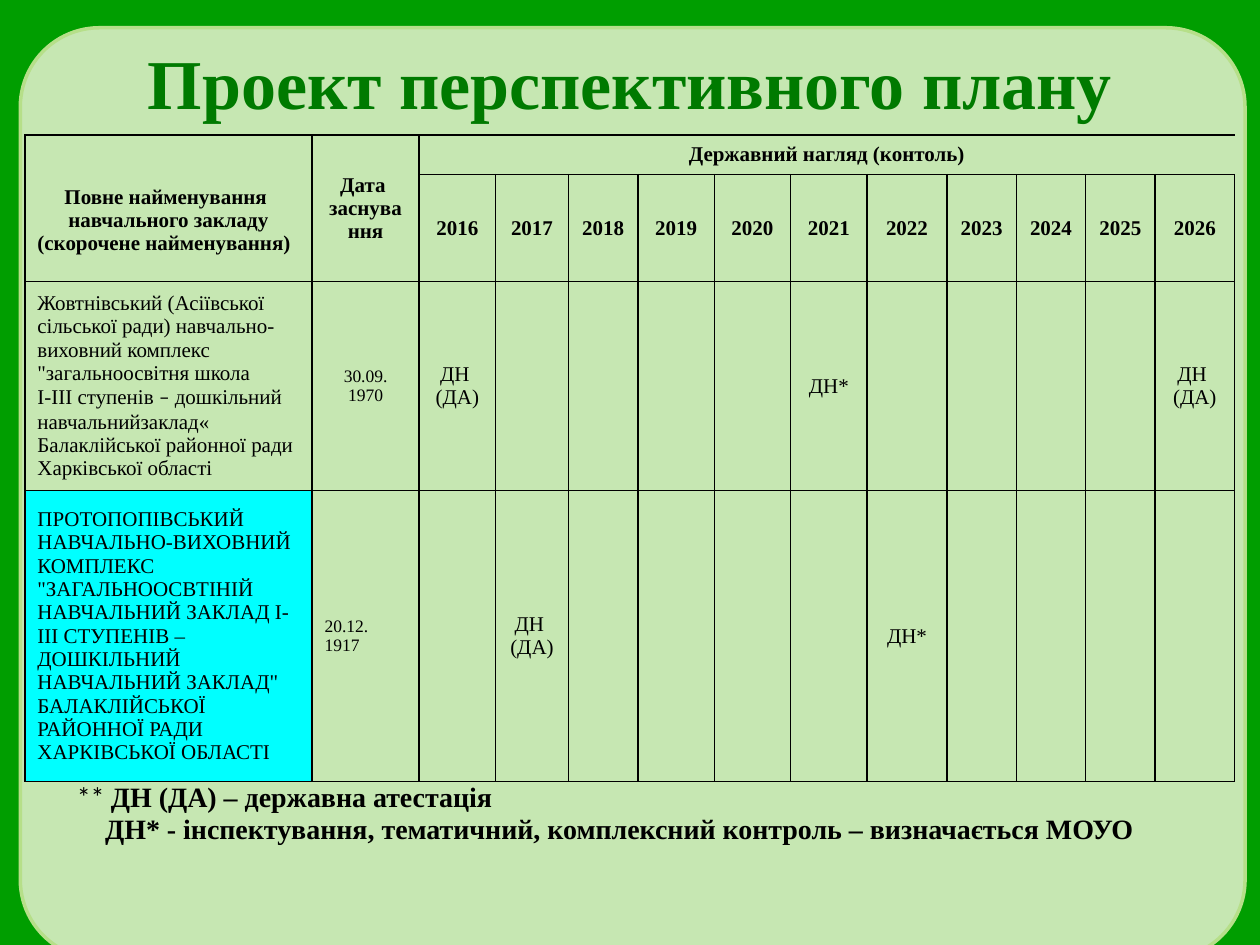
from lxml import etree
from pptx import Presentation
from pptx.dml.color import RGBColor
from pptx.enum.shapes import MSO_SHAPE
from pptx.enum.text import MSO_ANCHOR, PP_ALIGN
from pptx.oxml.ns import qn
from pptx.util import Cm, Pt

ROUNDED = MSO_SHAPE.ROUNDED_RECTANGLE
MIDDLE, TOP = MSO_ANCHOR.MIDDLE, MSO_ANCHOR.TOP
LEFT, CENTER, JUSTIFY = PP_ALIGN.LEFT, PP_ALIGN.CENTER, PP_ALIGN.JUSTIFY
TITLE_ONLY = 5
SERIF, SANS = "Times New Roman", "Calibri"

COLUMN_WIDTHS = [5.79, 2.16, 1.54, 1.47, 1.4, 1.54, 1.54, 1.54, 1.61, 1.4, 1.4, 1.4, 1.6]
ROW_HEIGHTS = [0.8, 2.1, 4.21, 5.87]
FIRST_YEAR, FIRST_YEAR_COLUMN = 2016, 2
ATTESTATION = ["ДН ", "(ДА)"]
INSPECTION = ["ДН*"]
SCHOOLS = [
    {
        "name": [
            "Жовтнівський (Асіївської",
            "сільської ради) навчально-",
            "виховний комплекс",
            '"загальноосвітня школа',
            [("І-ІІІ ступенів ", SERIF), ("–", SANS), (" дошкільний", SERIF)],
            "навчальнийзаклад«",
            "Балаклійської районної ради",
            "Харківської області",
        ],
        "founded": ["30.09.", "1970"],
        "date_align": CENTER,
        "fill": None,
        "plan": {2016: ATTESTATION, 2021: INSPECTION, 2026: ATTESTATION},
    },
    {
        "name": [
            "ПРОТОПОПІВСЬКИЙ",
            "НАВЧАЛЬНО-ВИХОВНИЙ",
            "КОМПЛЕКС",
            '"ЗАГАЛЬНООСВТІНІЙ',
            "НАВЧАЛЬНИЙ ЗАКЛАД І-",
            "ІІІ СТУПЕНІВ –",
            "ДОШКІЛЬНИЙ",
            'НАВЧАЛЬНИЙ ЗАКЛАД"',
            "БАЛАКЛІЙСЬКОЇ",
            "РАЙОННОЇ РАДИ",
            "ХАРКІВСЬКОЇ ОБЛАСТІ",
        ],
        "founded": ["20.12.", "1917"],
        "date_align": JUSTIFY,
        "fill": "00FFFF",
        "plan": {2017: ATTESTATION, 2022: INSPECTION},
    },
]


def paint(target, color):
    target.solid()
    target.fore_color.rgb = RGBColor.from_string(color)


def add_span(para, text, font=SERIF, size=12, bold=False, color="000000"):
    span = para.add_run()
    span.text = text
    span.font.name = font
    span.font.size = Pt(size)
    span.font.bold = bold
    span.font.color.rgb = RGBColor.from_string(color)


def write(frame, lines, align=CENTER, **style):
    for number, line in enumerate(lines):
        para = frame.add_paragraph() if number else frame.paragraphs[0]
        para.alignment = align
        pieces = [(line, SERIF)] if isinstance(line, str) else line
        for text, font in pieces:
            add_span(para, text, font, **style)


def place(shape, left, top, width, height):
    shape.left, shape.top, shape.width, shape.height = map(Cm, (left, top, width, height))


def add_panel(page, left, top, width, height):
    panel = page.shapes.add_shape(ROUNDED, Cm(left), Cm(top), Cm(width), Cm(height))
    panel.adjustments[0] = 0.085
    panel.shadow.inherit = False
    paint(panel.fill, "DCF0C6")
    tint = panel.fill._xPr.find(qn("a:solidFill"))[0]
    etree.SubElement(tint, qn("a:alpha"), val="90000")
    paint(panel.line.fill, "B6DF89")
    panel.line.width = Pt(2)
    page.shapes._spTree.insert(2, panel._element)


def format_title(page, left, top, width, height):
    title = page.shapes.title
    place(title, left, top, width, height)
    title.text_frame.vertical_anchor = MIDDLE
    write(title.text_frame, ["Проект перспективного плану"], size=40, bold=True, color="007A00")


def draw_borders(cell, sides):
    properties = cell._tc.get_or_add_tcPr()
    for side in "LRTB":
        line = etree.SubElement(properties, qn("a:ln" + side), w=str(Pt(1)))
        if side in sides:
            fill = etree.SubElement(line, qn("a:solidFill"))
            etree.SubElement(fill, qn("a:srgbClr"), val="000000")
        else:
            etree.SubElement(line, qn("a:noFill"))


def border_sides(row, column):
    if row == 0:
        if column < FIRST_YEAR_COLUMN:
            return "LRT"
        return "LTB" if column == FIRST_YEAR_COLUMN else "TB"
    if row == 1 and column < FIRST_YEAR_COLUMN:
        return "LRB"
    return "LRTB"


def fill_header(table):
    last_column = len(COLUMN_WIDTHS) - 1
    for column in range(FIRST_YEAR_COLUMN):
        table.cell(0, column).merge(table.cell(1, column))
    table.cell(0, FIRST_YEAR_COLUMN).merge(table.cell(0, last_column))

    name = table.cell(0, 0)
    name.margin_top = Cm(0.62)
    write(name.text_frame, ["Повне найменування ", "навчального закладу",
                            "(скорочене найменування)"], bold=True)
    name.text_frame.paragraphs[-1].alignment = LEFT
    write(table.cell(0, 1).text_frame, ["Дата ", "заснува", "ння"], bold=True)
    write(table.cell(0, FIRST_YEAR_COLUMN).text_frame, ["Державний нагляд (контоль)"], bold=True)
    for column in range(FIRST_YEAR_COLUMN, last_column + 1):
        year = FIRST_YEAR + column - FIRST_YEAR_COLUMN
        write(table.cell(1, column).text_frame, [str(year)], bold=True)


def fill_school(table, row, school):
    name = table.cell(row, 0)
    write(name.text_frame, school["name"], align=LEFT)
    if school["fill"]:
        paint(name.fill, school["fill"])
    write(table.cell(row, 1).text_frame, school["founded"], align=school["date_align"], size=10)
    for year, lines in school["plan"].items():
        column = FIRST_YEAR_COLUMN + year - FIRST_YEAR
        write(table.cell(row, column).text_frame, lines)


def add_plan(page, left, top):
    table = page.shapes.add_table(
        len(ROW_HEIGHTS), len(COLUMN_WIDTHS), Cm(left), Cm(top),
        Cm(sum(COLUMN_WIDTHS)), Cm(sum(ROW_HEIGHTS))).table
    table.first_row = table.horz_banding = False
    for column, width in zip(table.columns, COLUMN_WIDTHS):
        column.width = Cm(width)
    for row, height in zip(table.rows, ROW_HEIGHTS):
        row.height = Cm(height)
    for row in range(len(ROW_HEIGHTS)):
        for column in range(len(COLUMN_WIDTHS)):
            cell = table.cell(row, column)
            draw_borders(cell, border_sides(row, column))
            cell.fill.background()
            cell.vertical_anchor = MIDDLE
    fill_header(table)
    for row, school in enumerate(SCHOOLS, start=2):
        fill_school(table, row, school)
    for cell in table.iter_cells():
        if not cell.text_frame.text:
            cell.margin_top = cell.margin_bottom = 0


def add_legend(page, left, top, width, height):
    box = page.shapes.add_textbox(Cm(left), Cm(top), Cm(width), Cm(height))
    frame = box.text_frame
    frame.word_wrap = True
    frame.vertical_anchor = TOP
    first, second = frame.paragraphs[0], frame.add_paragraph()
    add_span(first, "** ", SANS, size=16)
    add_span(first, "ДН (ДА) – державна атестація", size=16, bold=True)
    second._p.get_or_add_pPr().set("marL", str(Cm(0.57)))
    add_span(second, "ДН* - інспектування, тематичний, комплексний контроль – визначається МОУО",
             size=16, bold=True)
    for para in (first, second):
        para.line_spacing = 0.8
    second.space_before = Pt(3.2)


def main():
    deck = Presentation()
    deck.slide_width, deck.slide_height = Cm(25.4), Cm(19.05)
    page = deck.slides.add_slide(deck.slide_layouts[TITLE_ONLY])
    paint(page.background.fill, "009E00")
    add_panel(page, 0.41, 0.56, 24.69, 18.77 - 0.56 * 0.0 - 0.0)
    format_title(page, 1.27, 0.76, 22.86, 1.75)
    add_plan(page, 0.5, 2.72)
    add_legend(page, 1.3, 15.72, 22.86, 1.8)
    deck.save("out.pptx")


if __name__ == "__main__":
    main()
